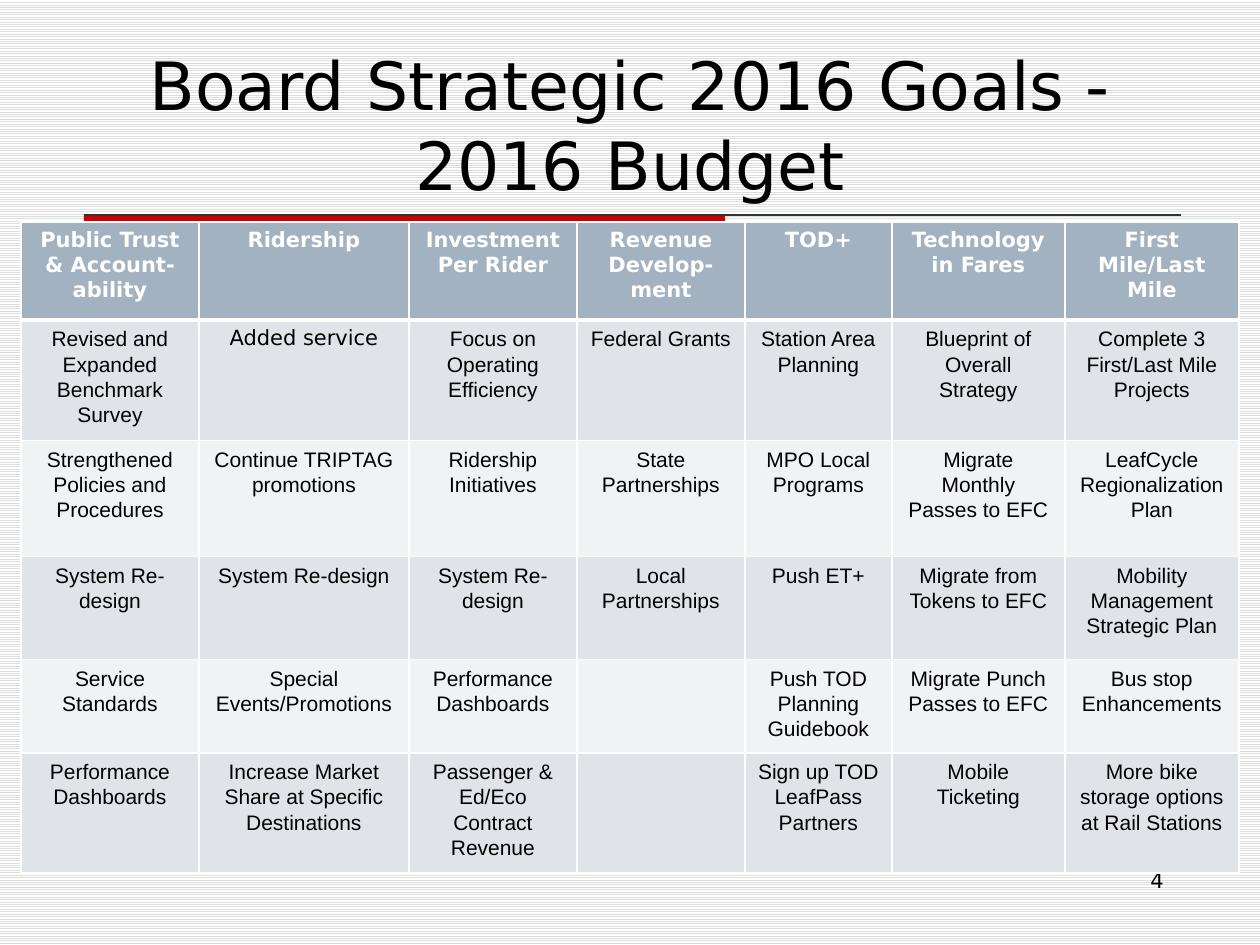
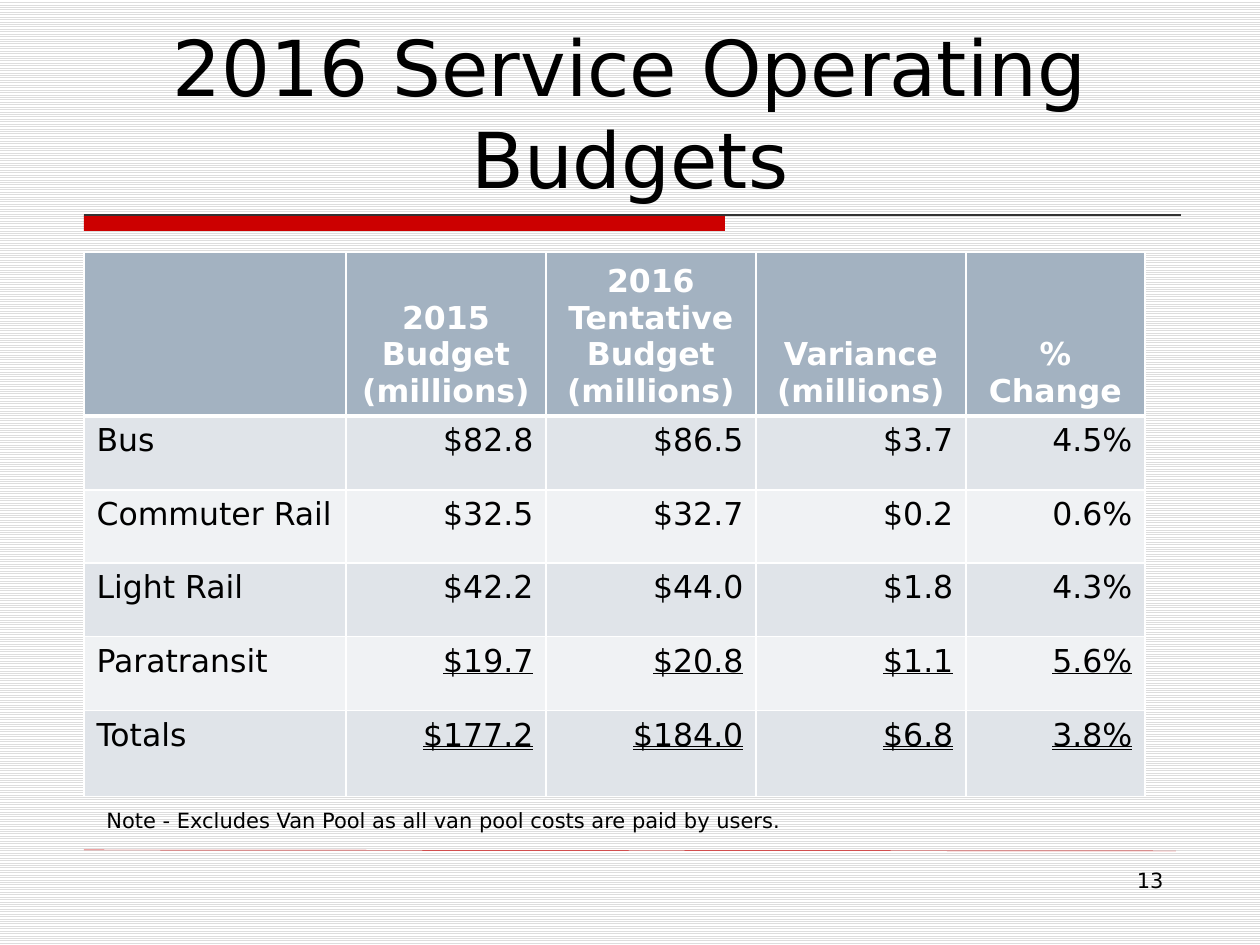
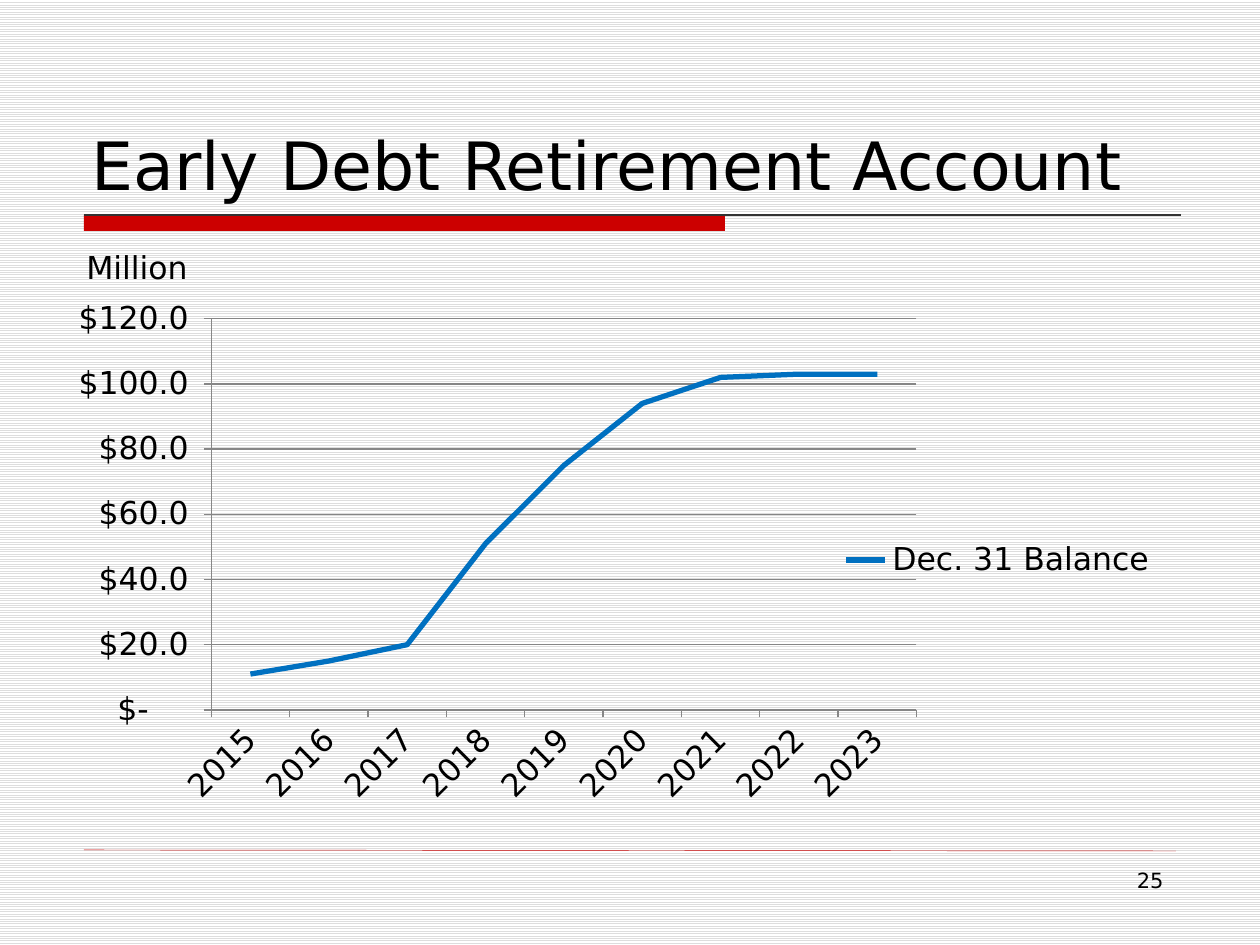
from lxml import etree
from pptx import Presentation
from pptx.chart.data import CategoryChartData
from pptx.dml.color import RGBColor
from pptx.enum.chart import XL_CHART_TYPE, XL_LEGEND_POSITION, XL_TICK_MARK
from pptx.enum.dml import MSO_PATTERN
from pptx.enum.shapes import MSO_CONNECTOR, MSO_SHAPE
from pptx.enum.text import MSO_ANCHOR, MSO_UNDERLINE, PP_ALIGN
from pptx.oxml.ns import qn
from pptx.util import Emu, Pt

PX = 914400 / 126
WHITE = RGBColor(0xFF, 0xFF, 0xFF)
BLACK = RGBColor(0x00, 0x00, 0x00)
STRIPE = RGBColor(0xDD, 0xDD, 0xDD)
RED = RGBColor(0xCC, 0x00, 0x00)
DARK = RGBColor(0x33, 0x33, 0x33)
HEADER = RGBColor(0xA3, 0xB2, 0xC1)
BAND_DARK = RGBColor(0xE0, 0xE4, 0xE9)
BAND_LIGHT = RGBColor(0xF0, 0xF2, 0xF4)
BLUE = RGBColor(0x00, 0x70, 0xC0)
GREY = RGBColor(0x86, 0x86, 0x86)
FONT = "DejaVu Sans"
LEFT, CENTER, RIGHT = PP_ALIGN.LEFT, PP_ALIGN.CENTER, PP_ALIGN.RIGHT


def write(tf, text, size=12, align=LEFT, font=FONT, color=BLACK, bold=False,
          underline=None, spacing=None, anchor=MSO_ANCHOR.TOP):
    tf.word_wrap = True
    tf.vertical_anchor = anchor
    for i, line in enumerate(text.split("\n")):
        p = tf.paragraphs[0] if i == 0 else tf.add_paragraph()
        p.alignment = align
        if spacing:
            p.line_spacing = spacing
        r = p.add_run()
        r.text = line
        r.font.size, r.font.name, r.font.bold = Pt(size), font, bold
        r.font.color.rgb = color
        r.font.underline = underline


def add_grid(slide, left, top, widths, heights):
    box = [Emu(round(v * PX)) for v in (left, top, sum(widths), sum(heights))]
    table = slide.shapes.add_table(len(heights), len(widths), *box).table
    for col, width in zip(table.columns, widths):
        col.width = Emu(round(width * PX))
    for i, (row, height) in enumerate(zip(table.rows, heights)):
        row.height = Emu(round(height * PX))
        for cell in row.cells:
            tcPr = cell._tc.get_or_add_tcPr()
            for side in "LRTB":
                # The rule under the header is thicker
                thick = (i == 0 and side == "B") or (i == 1 and side == "T")
                ln = etree.SubElement(tcPr, qn(f"a:ln{side}"), w=str(Pt(3 if thick else 1)))
                fill = etree.SubElement(ln, qn("a:solidFill"))
                etree.SubElement(fill, qn("a:srgbClr"), val=str(WHITE))
            cell.fill.solid()
            cell.fill.fore_color.rgb = HEADER if i == 0 else BAND_DARK if i % 2 else BAND_LIGHT
    return table


prs = Presentation()
prs.slide_width, prs.slide_height = Emu(round(1260 * PX)), Emu(round(945 * PX))

# Striped background for the whole deck
fill = prs.slide_master.background.fill
fill.patterned()
fill.pattern = MSO_PATTERN.LIGHT_HORIZONTAL
fill.fore_color.rgb, fill.back_color.rgb = STRIPE, WHITE

# Shared frame: title band, rules, title and page number
slides = []
for title, size, align, number in [
    ("Board Strategic 2016 Goals - 2016 Budget", 38, CENTER, "4"),
    ("2016 Service Operating Budgets", 44, CENTER, "13"),
    ("Early Debt Retirement Account", 38, LEFT, "25"),
]:
    s = prs.slides.add_slide(prs.slide_layouts[6])
    slides.append(s)
    band = s.shapes.add_shape(MSO_SHAPE.RECTANGLE, *[Emu(round(v * PX)) for v in (84, 215, 641, 16)])
    band.shadow.inherit = False
    band.fill.solid()
    band.fill.fore_color.rgb = RED
    band.line.fill.background()
    for ends, color, width in [((84, 215, 1181, 215), DARK, 0.75),
                               ((84, 850, 1176, 851), RED, 0.25)]:
        rule = s.shapes.add_connector(MSO_CONNECTOR.STRAIGHT, *[Emu(round(v * PX)) for v in ends])
        rule.line.color.rgb = color
        rule.line.width = Pt(width)
        etree.SubElement(rule._element.spPr, qn("a:effectLst"))
    sp = s.shapes.add_textbox(*[Emu(round(v * PX)) for v in (79, 42, 1102, 168)])
    write(sp.text_frame, title, size=size, align=align, anchor=MSO_ANCHOR.BOTTOM)
    sp = s.shapes.add_textbox(*[Emu(round(v * PX)) for v in (903, 861, 273, 66)])
    write(sp.text_frame, number, align=RIGHT)

goals_slide, budget_slide, debt_slide = slides

# Strategic goals table
goals = [
    ["Public Trust & Account-ability", "Ridership", "Investment Per Rider", "Revenue Develop-ment",
     "TOD+", "Technology in Fares", "First Mile/Last Mile"],
    ["Revised and Expanded Benchmark Survey", "Added service", "Focus on Operating Efficiency",
     "Federal Grants", "Station Area Planning", "Blueprint of Overall Strategy",
     "Complete 3 First/Last Mile Projects"],
    ["Strengthened\nPolicies and Procedures", "Continue TRIPTAG promotions", "Ridership Initiatives",
     "State Partnerships", "MPO Local Programs", "Migrate Monthly Passes to EFC",
     "LeafCycle Regionalization Plan"],
    ["System Re-design", "System Re-design", "System Re-design", "Local Partnerships", "Push ET+",
     "Migrate from Tokens to EFC", "Mobility Management Strategic Plan"],
    ["Service Standards", "Special Events/Promotions", "Performance Dashboards", "",
     "Push TOD Planning Guidebook", "Migrate Punch Passes to EFC", "Bus stop Enhancements"],
    ["Performance Dashboards", "Increase Market Share at Specific Destinations",
     "Passenger & Ed/Eco Contract Revenue", "", "Sign up TOD LeafPass Partners",
     "Mobile Ticketing", "More bike storage options at Rail Stations"],
]
table = add_grid(goals_slide, 21, 222, [178, 210, 168, 168, 147, 173, 174],
                 [98, 113, 116, 103, 87, 113])
for i, row in enumerate(goals):
    for j, text in enumerate(row):
        tf = table.cell(i, j).text_frame
        if i == 0:
            write(tf, text, align=CENTER, color=WHITE, bold=True)
        elif text == "Added service":
            write(tf, text, align=CENTER)
        elif text:
            write(tf, text, align=CENTER, font="Arial", spacing=1.07)

# Operating budgets table
budgets = [
    ["", "2015 Budget (millions)", "2016 Tentative Budget\n(millions)", "Variance\n(millions)", "% Change"],
    ["Bus", "$82.8", "$86.5", "$3.7", "4.5%"],
    ["Commuter Rail", "$32.5", "$32.7", "$0.2", "0.6%"],
    ["Light Rail", "$42.2", "$44.0", "$1.8", "4.3%"],
    ["Paratransit", "$19.7", "$20.8", "$1.1", "5.6%"],
    ["Totals", "$177.2", "$184.0", "$6.8", "3.8%"],
]
underlines = {"Paratransit": MSO_UNDERLINE.SINGLE_LINE, "Totals": MSO_UNDERLINE.DOUBLE_LINE}
table = add_grid(budget_slide, 84, 252, [262, 200, 210, 210, 179], [158, 74, 73, 74, 74, 86])
for i, row in enumerate(budgets):
    for j, text in enumerate(row):
        cell = table.cell(i, j)
        if i == 0 and text:
            write(cell.text_frame, text, size=18, align=CENTER, color=WHITE, bold=True)
            cell.vertical_anchor = MSO_ANCHOR.BOTTOM
        elif text:
            write(cell.text_frame, text, size=18, align=RIGHT if j else LEFT,
                  underline=underlines.get(row[0]) if j else None)

sp = budget_slide.shapes.add_textbox(*[Emu(round(v * PX)) for v in (94, 801, 851, 38)])
write(sp.text_frame, "Note - Excludes Van Pool as all van pool costs are paid by users.")

# Debt retirement chart
data = CategoryChartData()
data.categories = [str(year) for year in range(2015, 2024)]
data.add_series("Dec. 31 Balance", [11, 15, 20, 51, 75, 94, 102, 103, 103])
chart = debt_slide.shapes.add_chart(
    XL_CHART_TYPE.LINE, *[Emu(round(v * PX)) for v in (68, 292, 1102, 536)], data).chart
chart.has_title = False
chart.font.size, chart.font.name = Pt(18), FONT
chart.font.color.rgb = BLACK
chart.has_legend = True
chart.legend.position = XL_LEGEND_POSITION.RIGHT
chart.legend.include_in_layout = False
chart.plots[0].vary_by_categories = False
series = chart.plots[0].series[0]
series.smooth = False
series.format.line.color.rgb = BLUE
series.format.line.width = Pt(3)

years, dollars = chart.category_axis, chart.value_axis
dollars.minimum_scale, dollars.maximum_scale, dollars.major_unit = 0, 120, 20
dollars.has_major_gridlines = True
dollars.tick_labels.number_format = r'_("$"* #,##0.0_);_("$"* \(#,##0.0\);_("$"* "-"??_);_(@_)'
dollars.tick_labels.number_format_is_linked = False
for axis in (years, dollars):
    axis.major_tick_mark = XL_TICK_MARK.OUTSIDE
    axis.tick_labels.font.size = Pt(18)
for line in (years.format.line, dollars.format.line, dollars.major_gridlines.format.line):
    line.color.rgb = GREY
    line.width = Pt(0.75)
years._element.find(qn("c:txPr")).find(qn("a:bodyPr")).set("rot", "-2700000")

# Fixed place of the plot inside the chart
plot_area = chart._chartSpace.chart.plotArea
for old in plot_area.findall(qn("c:layout")):
    plot_area.remove(old)
layout = etree.Element(qn("c:layout"))
plot_area.insert(0, layout)
manual = etree.SubElement(layout, qn("c:manualLayout"))
for tag, val in [("layoutTarget", "inner"), ("xMode", "edge"), ("yMode", "edge"),
                 ("x", "0.13"), ("y", "0.05"), ("w", "0.64"), ("h", "0.73")]:
    etree.SubElement(manual, qn(f"c:{tag}"), val=val)

sp = debt_slide.shapes.add_textbox(*[Emu(round(v * PX)) for v in (74, 242, 199, 50)])
write(sp.text_frame, "Million", size=18)

prs.save("out.pptx")
